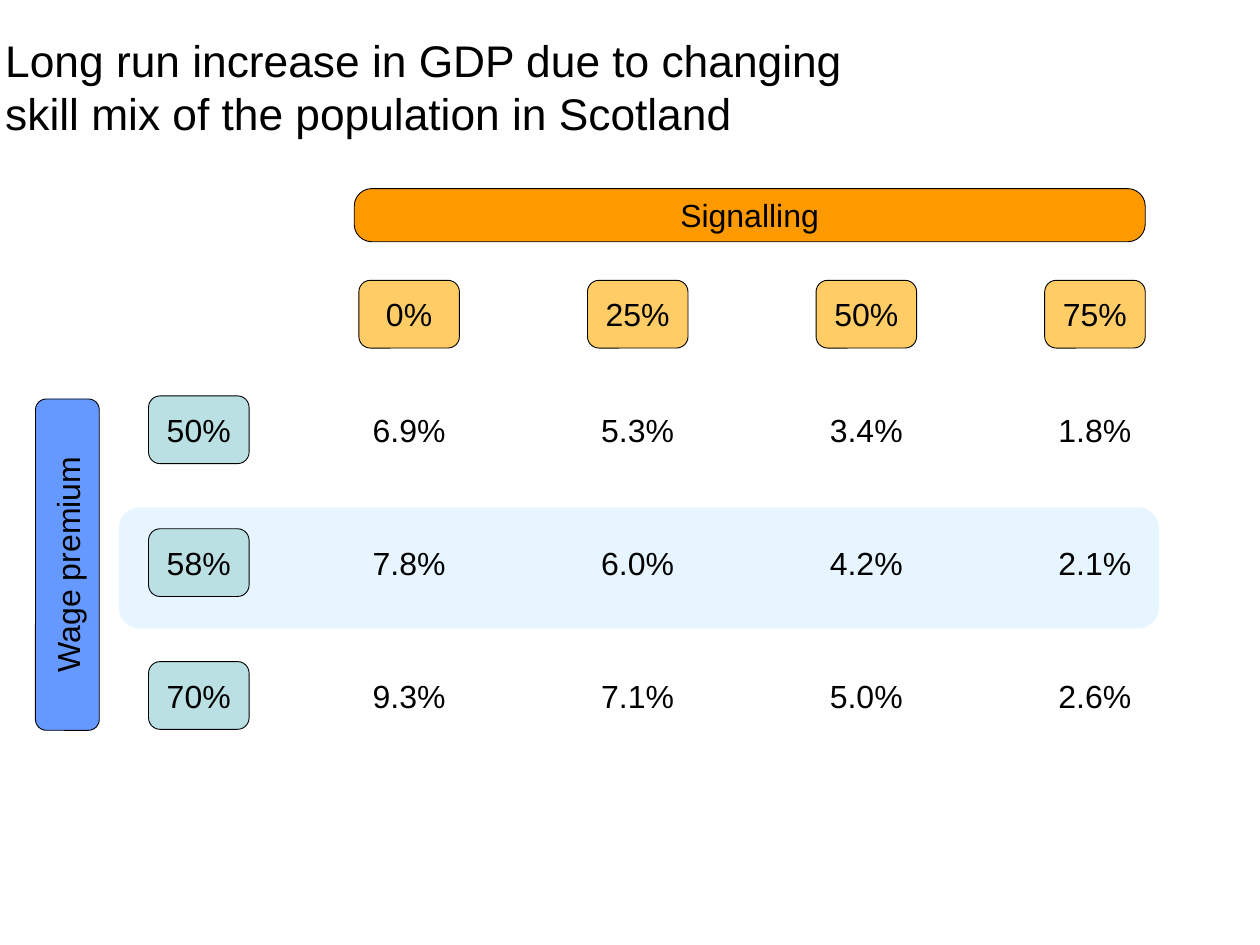
from lxml import etree
from pptx import Presentation
from pptx.dml.color import RGBColor
from pptx.enum.shapes import MSO_SHAPE
from pptx.enum.text import MSO_ANCHOR, MSO_AUTO_SIZE, PP_ALIGN
from pptx.oxml.ns import qn
from pptx.util import Inches, Pt

ROUNDED = MSO_SHAPE.ROUNDED_RECTANGLE
MIDDLE, BOTTOM = MSO_ANCHOR.MIDDLE, MSO_ANCHOR.BOTTOM
NO_AUTOFIT = MSO_AUTO_SIZE.NONE
LEFT, CENTER = PP_ALIGN.LEFT, PP_ALIGN.CENTER

COLORS = {
    "ink": "000000",
    "signalling": "FF9900",
    "signalling_level": "FFCC66",
    "premium": "6699FF",
    "premium_level": "BBE0E3",
    "highlight": "CCECFF",
}
SLIDE_SIZE = (14.22, 10.67)
GRID_ORIGIN = (4.05, 4.47)
GRID_PITCH = (2.58, 1.5)
CELL_SIZE = (0.44, 0.51)
HEADER_ROW = -0.87
LABEL_COLUMN = -0.92

SIGNALLING_LEVELS = ["0%", "25%", "50%", "75%"]
GDP_INCREASES = {
    "50%": ["6.9%", "5.3%", "3.4%", "1.8%"],
    "58%": ["7.8%", "6.0%", "4.2%", "2.1%"],
    "70%": ["9.3%", "7.1%", "5.0%", "2.6%"],
}


class GridSlide:
    font_name = "Arial"
    title_size = 36
    label_size = 26

    def __init__(self, presentation):
        self.slide = presentation.slides.add_slide(presentation.slide_layouts[5])

    def box(self, column, row, columns, rows):
        return (
            Inches(GRID_ORIGIN[0] + column * GRID_PITCH[0]),
            Inches(GRID_ORIGIN[1] + row * GRID_PITCH[1]),
            Inches(columns * GRID_PITCH[0]),
            Inches(rows * GRID_PITCH[1]),
        )

    def set_text(self, shape, text, size, alignment, anchor, margins, wrap):
        frame = shape.text_frame
        frame.text = text
        frame.auto_size = NO_AUTOFIT
        frame.word_wrap = wrap
        frame.vertical_anchor = anchor
        frame.margin_left = frame.margin_right = Inches(margins[0])
        frame.margin_top = frame.margin_bottom = Inches(margins[1])
        paragraph = frame.paragraphs[0]
        paragraph.alignment = alignment
        font = paragraph.runs[0].font
        font.name = self.font_name
        font.size = Pt(size)
        font.color.rgb = RGBColor.from_string(COLORS["ink"])

    def title(self, text, column, row, columns, rows):
        title = self.slide.shapes.title
        title.left, title.top, title.width, title.height = self.box(column, row, columns, rows)
        self.set_text(title, text, self.title_size, LEFT, BOTTOM, (0.06, 0.06), True)

    def panel(self, column, row, columns, rows, color=None, rounding=0.17):
        shape = self.slide.shapes.add_shape(ROUNDED, *self.box(column, row, columns, rows))
        shape.shadow.inherit = False
        shape.adjustments[0] = rounding
        shape.line.fill.background()
        if color:
            shape.fill.solid()
            shape.fill.fore_color.rgb = RGBColor.from_string(COLORS[color])
        else:
            shape.fill.background()
        return shape

    def highlight(self, column, row, columns, rows, opacity):
        shape = self.panel(column, row, columns, rows, "highlight")
        color = next(shape.element.iter(qn("a:srgbClr")))
        etree.SubElement(color, qn("a:alpha")).set("val", str(opacity * 1000))

    def label(self, text, column, row, size=CELL_SIZE, color=None, rounding=0.17):
        shape = self.panel(column, row, *size, color, rounding)
        if color:
            shape.line.color.rgb = RGBColor.from_string(COLORS["ink"])
            shape.line.width = Pt(0.75)
        self.set_text(shape, text, self.label_size, CENTER, MIDDLE, (0.14, 0.07), False)
        return shape


def main():
    presentation = Presentation()
    presentation.slide_width, presentation.slide_height = map(Inches, SLIDE_SIZE)
    page = GridSlide(presentation)

    page.title(
        "Long run increase in GDP due to changing skill mix of the population in Scotland",
        -1.57, -2.85, 3.93, 0.96,
    )
    page.highlight(-1.05, 0.84, 4.55, 0.91, opacity=48)
    page.label("Signalling", -0.02, -1.56, (3.46, 0.4), "signalling", rounding=0.33)
    premium = page.label("Wage premium", -2, 1.03, (1.45, 0.48), "premium")
    premium.rotation = 270

    for column, level in enumerate(SIGNALLING_LEVELS):
        page.label(level, column, HEADER_ROW, color="signalling_level")
    for row, (level, increases) in enumerate(GDP_INCREASES.items()):
        page.label(level, LABEL_COLUMN, row, color="premium_level")
        for column, increase in enumerate(increases):
            page.label(increase, column, row)

    presentation.save("out.pptx")


if __name__ == "__main__":
    main()
